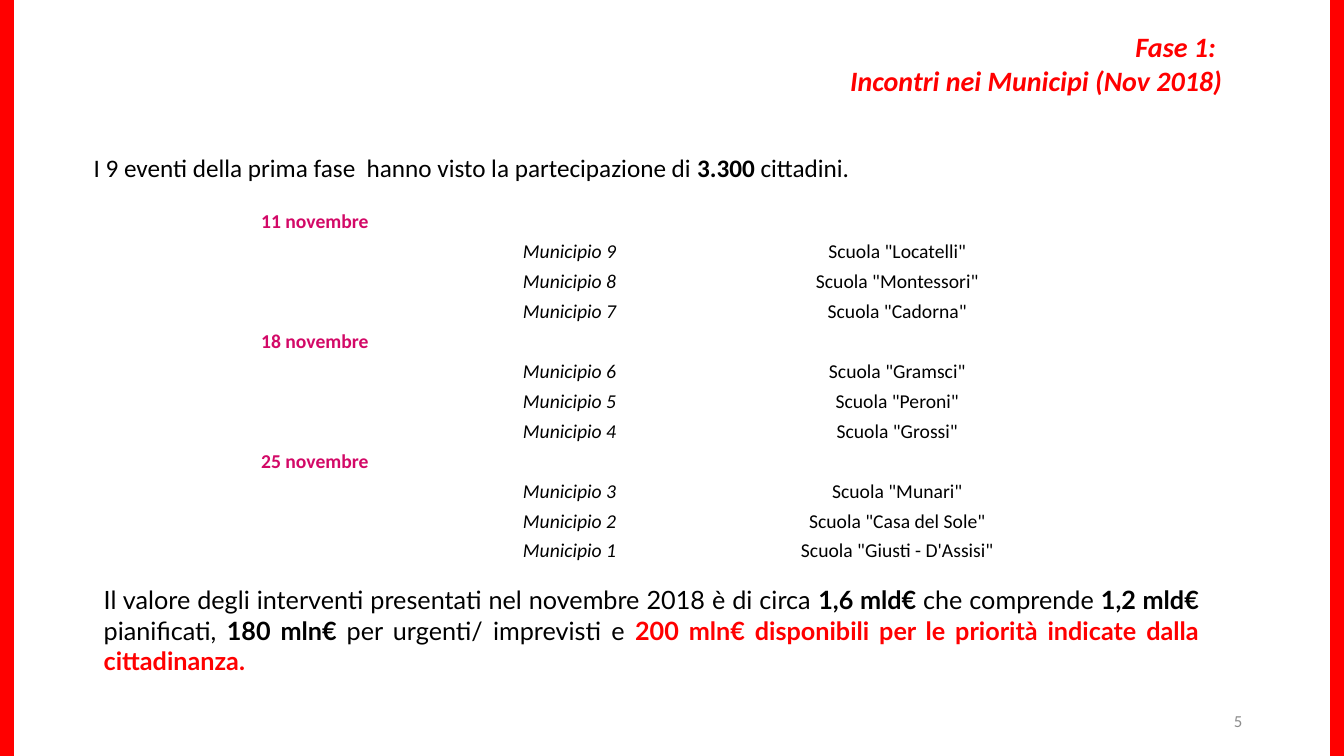
import lxml.etree
import pptx
import pptx.dml.color
import pptx.enum.shapes
import pptx.enum.text
import pptx.oxml.ns
import pptx.util

ALIGN = pptx.enum.text.PP_ALIGN
ANCHOR = pptx.enum.text.MSO_ANCHOR
RED, BLACK, MAGENTA, GREY, WHITE = "FF0000", "000000", "D30967", "8C8C8C", "FFFFFF"

deck = pptx.Presentation()
deck.slide_width = pptx.util.Inches(13.33)
deck.slide_height = pptx.util.Inches(7.5)
slide = deck.slides.add_slide(deck.slide_layouts[6])

# One column and one row are each a hundredth of the slide
COL = deck.slide_width / 100
ROW = deck.slide_height / 100


def rgb(code):
    return pptx.dml.color.RGBColor.from_string(code)


def write(frame, *paragraphs, size=18, font="Calibri", color=BLACK, bold=False,
          italic=False, align=ALIGN.LEFT):
    """Fill a text frame; each paragraph is a list of (text, format overrides)."""
    for index, runs in enumerate(paragraphs):
        paragraph = frame.add_paragraph() if index else frame.paragraphs[0]
        paragraph.alignment = align
        for text, changes in runs:
            run = paragraph.add_run()
            run.text = text
            run.font.size = pptx.util.Pt(size)
            run.font.name = font
            run.font.bold = changes.get("bold", bold)
            run.font.italic = italic
            run.font.color.rgb = rgb(changes.get("color", color))


# Red side bars
for bar_left in (0, 99):
    bar = slide.shapes.add_shape(pptx.enum.shapes.MSO_SHAPE.RECTANGLE,
                                 int(bar_left * COL), 0, int(COL), deck.slide_height)
    bar.shadow.inherit = False
    bar.fill.solid()
    bar.fill.fore_color.rgb = rgb(RED)
    bar.line.color.rgb = rgb(RED)
    bar.line.width = pptx.util.Pt(1)

# Calendar of the meetings
meetings = [
    ("11 novembre", ["Locatelli", "Montessori", "Cadorna"]),
    ("18 novembre", ["Gramsci", "Peroni", "Grossi"]),
    ("25 novembre", ["Munari", "Casa del Sole", "Giusti - D'Assisi"]),
]
calendar_rows = []
municipio = 9
for date, schools in meetings:
    calendar_rows.append((date, "", ""))
    for school in schools:
        calendar_rows.append(("", f"Municipio {municipio}", f'Scuola "{school}"'))
        municipio -= 1

calendar = slide.shapes.add_table(len(calendar_rows), 3, int(19.35 * COL), int(27.33 * ROW),
                                  int(61.22 * COL), int(47.5 * ROW)).table
calendar.first_row = False
calendar.horz_banding = False
for column, width in zip(calendar.columns, (12.45, 21.16, 27.61)):
    column.width = int(width * COL)

column_formats = [
    dict(color=MAGENTA, bold=True),
    dict(italic=True, align=ALIGN.CENTER),
    dict(align=ALIGN.CENTER),
]
for row_index, texts in enumerate(calendar_rows):
    for column_index, text in enumerate(texts):
        cell = calendar.cell(row_index, column_index)
        cell.vertical_anchor = ANCHOR.MIDDLE
        cell.margin_left = cell.margin_right = cell.margin_top = pptx.util.Inches(0.01)
        cell.margin_bottom = 0
        if text:
            write(cell.text_frame, [(text, {})], size=14, **column_formats[column_index])
        else:
            # Keeps an empty cell from stretching its row
            lxml.etree.SubElement(cell.text_frame.paragraphs[0]._p,
                                  pptx.oxml.ns.qn("a:endParaRPr"), sz="1400")
        properties = cell._tc.get_or_add_tcPr()
        for side in ("lnL", "lnR", "lnT", "lnB"):
            border = lxml.etree.SubElement(properties, pptx.oxml.ns.qn(f"a:{side}"), w="12700")
            paint = lxml.etree.SubElement(border, pptx.oxml.ns.qn("a:solidFill"))
            lxml.etree.SubElement(paint, pptx.oxml.ns.qn("a:srgbClr"), val=WHITE)
        cell.fill.background()

# Title, opening sentence, closing paragraph and page number
strong = dict(bold=True)
opening = [
    ("I 9 eventi della prima fase  hanno visto la partecipazione di ", {}),
    ("3.300", strong),
    (" cittadini.", {}),
]
closing = [
    ("Il valore degli interventi presentati nel novembre 2018 è di circa ", {}),
    ("1,6 mld€ ", strong),
    ("che comprende ", {}),
    ("1,2 mld€", strong),
    (" pianificati, ", {}),
    ("180 mln€ ", strong),
    ("per urgenti/ imprevisti e ", {}),
    ("200 mln€ disponibili per le priorità indicate dalla cittadinanza. ",
     dict(bold=True, color=RED)),
]
passages = [
    ((70.67, 92.67, 22.5, 5.33), ANCHOR.MIDDLE, True, [[("5", {})]],
     dict(size=12, color=GREY, align=ALIGN.RIGHT)),
    ((45.69, 5.07, 45.99, 6.67), ANCHOR.MIDDLE, True,
     [[("Fase 1: ", {})], [("Incontri nei Municipi (Nov 2018)", {})]],
     dict(size=20, color=RED, bold=True, italic=True, align=ALIGN.RIGHT)),
    ((6.23, 19.47, 58.44, 5.33), ANCHOR.TOP, False, [opening], {}),
    ((6.98, 76.67, 82.97, 13.47), ANCHOR.TOP, True, [closing],
     dict(font="Lato", align=ALIGN.JUSTIFY)),
]
for (left, top, width, height), anchor, wraps, paragraphs, style in passages:
    frame = slide.shapes.add_textbox(int(left * COL), int(top * ROW),
                                     int(width * COL), int(height * ROW)).text_frame
    frame.word_wrap = wraps
    frame.vertical_anchor = anchor
    if anchor == ANCHOR.TOP:
        frame.auto_size = pptx.enum.text.MSO_AUTO_SIZE.SHAPE_TO_FIT_TEXT
    write(frame, *paragraphs, **style)

deck.save("out.pptx")
